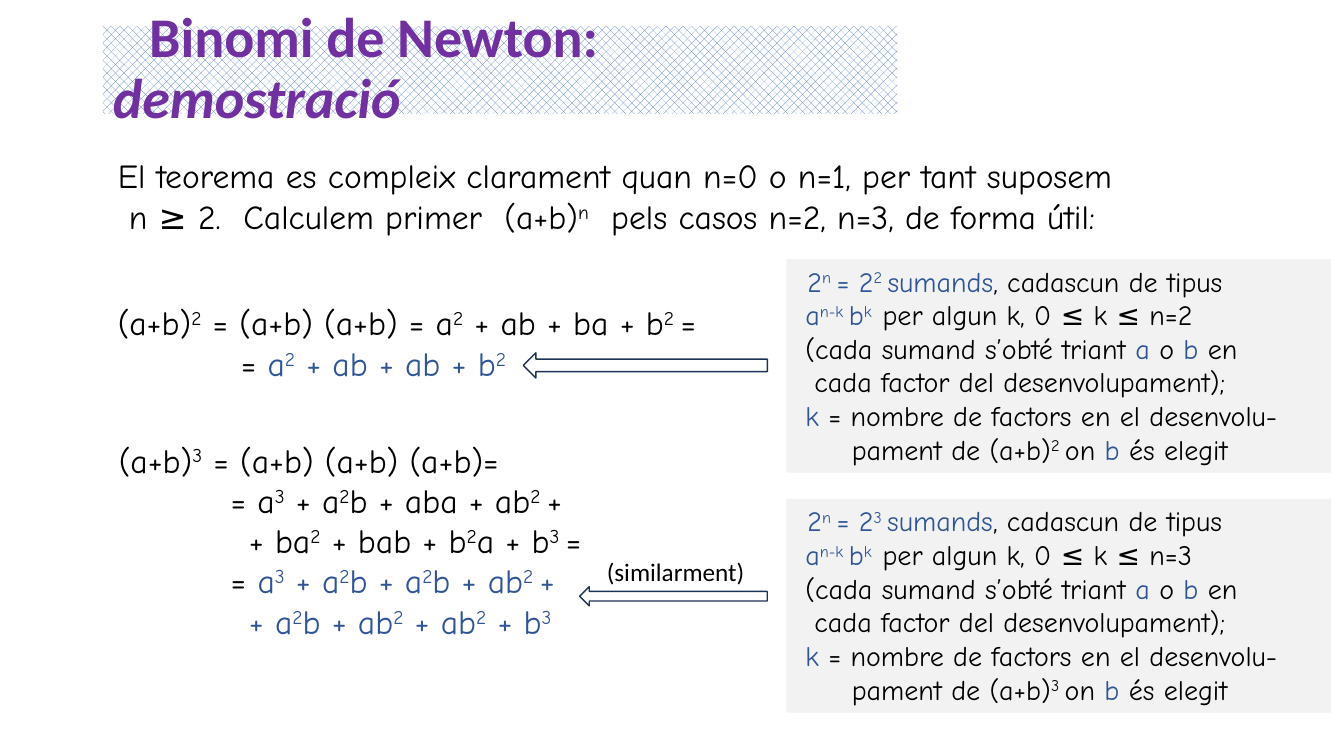
from typing import NamedTuple

from pptx import Presentation
from pptx.dml.color import RGBColor
from pptx.enum.dml import MSO_PATTERN
from pptx.enum.shapes import MSO_SHAPE
from pptx.enum.text import MSO_ANCHOR, MSO_AUTO_SIZE, PP_ALIGN
from pptx.util import Inches, Pt

WEAVE = MSO_PATTERN.WEAVE
ARROW = MSO_SHAPE.LEFT_ARROW
MIDDLE = MSO_ANCHOR.MIDDLE
NO_FIT = MSO_AUTO_SIZE.NONE
LEFT = PP_ALIGN.LEFT

BLACK = RGBColor(0x00, 0x00, 0x00)
WHITE = RGBColor(0xFF, 0xFF, 0xFF)
BLUE = RGBColor(0x2F, 0x55, 0x97)
NAVY = RGBColor(0x1E, 0x32, 0x56)
MESH = RGBColor(0x44, 0x72, 0xC4)
GREY = RGBColor(0xF2, 0xF2, 0xF2)
PURPLE = RGBColor(0x70, 0x30, 0xA0)

HAND = "Comic Neue"
SANS = "Calibri"


class Area(NamedTuple):
    left: float
    top: float
    width: float
    height: float


class Row(NamedTuple):
    """A line of text: |...| is blue, ^...^ is superscript."""
    indent: float
    text: str


class Block(NamedTuple):
    area: Area
    rows: list[Row]
    size: int = 24
    font: str = HAND
    fill: RGBColor | None = None


def place(shape, area: Area) -> None:
    shape.left, shape.top, shape.width, shape.height = map(Inches, area)


def add_run(para, text: str, font: str, size: int, color: RGBColor):
    run = para.add_run()
    run.text = text
    run.font.name = font
    run.font.size = Pt(size)
    run.font.color.rgb = color
    return run


def add_row(para, row: Row, block: Block) -> None:
    para._p.get_or_add_pPr().set("marL", str(Inches(row.indent)))
    for i, part in enumerate(row.text.split("|")):
        for j, bit in enumerate(part.split("^")):
            if bit:
                run = add_run(para, bit, block.font, block.size,
                              BLUE if i % 2 else BLACK)
                if j % 2:
                    run._r.get_or_add_rPr().set("baseline", "30000")


def add_block(slide, block: Block) -> None:
    box = slide.shapes.add_textbox(*map(Inches, block.area))
    if block.fill is not None:
        box.fill.solid()
        box.fill.fore_color.rgb = block.fill
    frame = box.text_frame
    frame.word_wrap = True
    for n, row in enumerate(block.rows):
        para = frame.add_paragraph() if n else frame.paragraphs[0]
        add_row(para, row, block)


def add_arrow(slide, area: Area) -> None:
    arrow = slide.shapes.add_shape(ARROW, *map(Inches, area))
    arrow.shadow.inherit = False
    arrow.fill.background()
    arrow.line.color.rgb = NAVY
    arrow.line.width = Pt(1)


def add_title(slide) -> None:
    title = slide.shapes.title
    place(title, Area(1.02, 0.26, 7.88, 0.87))
    title.fill.patterned()
    title.fill.pattern = WEAVE
    title.fill.fore_color.rgb = MESH
    title.fill.back_color.rgb = WHITE
    frame = title.text_frame
    frame.word_wrap = True
    frame.auto_size = NO_FIT
    frame.vertical_anchor = MIDDLE
    para = frame.paragraphs[0]
    para.alignment = LEFT
    para.line_spacing = 0.9
    para._p.get_or_add_pPr().set("indent", str(Inches(0.36)))
    first = add_run(para, "Binomi de Newton:", SANS, 40, PURPLE)
    para.add_line_break()
    last = add_run(para, "demostració", SANS, 40, PURPLE)
    first.font.bold = last.font.bold = True
    last.font.italic = True


def note(n: int, top: float) -> Block:
    """The grey panel that explains the terms for exponent n."""
    return Block(Area(7.8, top, 5.4, 2.12), [
        Row(0.11, f"|2^n ^= 2^{n} ^sumands|, cadascun de tipus"),
        Row(0.09, f"|a^n-k ^b^k  ^|per algun k, 0 ≤ k ≤ n={n}"),
        Row(0.09, "(cada sumand s’obté triant |a| o |b| en"),
        Row(0.18, "cada factor del desenvolupament);"),
        Row(0.09, "|k| = nombre de factors en el desenvolu-"),
        Row(0.55, f"pament de (a+b)^{n} ^on |b| és elegit"),
    ], size=20, fill=GREY)


INTRO = Block(Area(0.74, 1.49, 11.3, 0.91), [
    Row(0.33, "El teorema es compleix clarament quan n=0 o n=1, "
              "per tant suposem"),
    Row(0.44, "n ≥ 2.  Calculem primer  (a+b)^n^  pels casos n=2, n=3, "
              "de forma útil:"),
])
SQUARE = Block(Area(0.74, 2.95, 6.56, 0.91), [
    Row(0.33, "(a+b)^2^ = (a+b) (a+b) = a^2^ + ab + ba + b^2 ^="),
    Row(1.55, "= |a^2^ + ab + ab + b^2^|"),
])
CUBE = Block(Area(0.75, 4.31, 5.18, 2.12), [
    Row(0.33, "(a+b)^3^ = (a+b) (a+b) (a+b)="),
    Row(1.44, "= a^3^ + a^2^b + aba + ab^2 ^+"),
    Row(1.62, "+ ba^2^ + bab + b^2^a + b^3 ^="),
    Row(1.44, "= |a^3^ + a^2^b + a^2^b + ab^2 ^+|"),
    Row(1.62, "|+ a^2^b + ab^2^ + ab^2^ + b^3^|"),
])
LABEL = Block(Area(5.75, 5.47, 1.94, 0.4), [Row(0.17, "(similarment)")],
              size=18, font=SANS)
ARROWS = [Area(5.19, 3.5, 2.42, 0.25), Area(5.75, 5.82, 1.86, 0.19)]


def main() -> None:
    deck = Presentation()
    deck.slide_width, deck.slide_height = Inches(13.33), Inches(7.5)
    slide = deck.slides.add_slide(deck.slide_layouts[5])
    add_title(slide)
    # Formulas, label and panels
    for block in (INTRO, SQUARE, CUBE, LABEL, note(2, 2.57), note(3, 4.95)):
        add_block(slide, block)
    # Arrows from the panels to the formulas
    for area in ARROWS:
        add_arrow(slide, area)
    deck.save("out.pptx")


if __name__ == "__main__":
    main()
